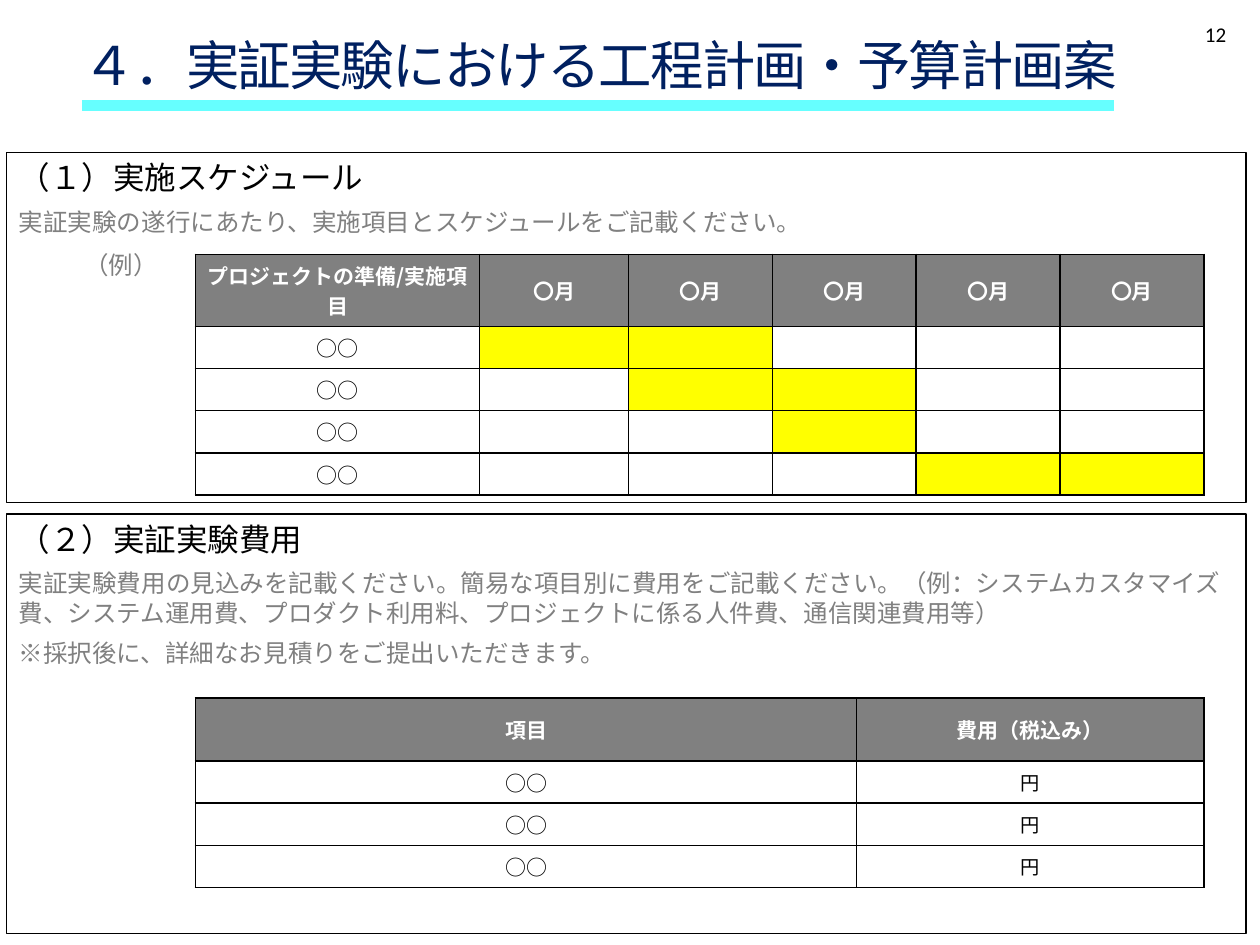
"""Build the schedule and budget plan slide for the demonstration experiment."""
from dataclasses import dataclass

from lxml import etree
from pptx import Presentation
from pptx.dml.color import RGBColor
from pptx.enum.shapes import MSO_CONNECTOR, MSO_SHAPE
from pptx.enum.text import MSO_ANCHOR, PP_ALIGN
from pptx.oxml.ns import qn
from pptx.util import Cm, Pt

LEFT, CENTER, RIGHT = PP_ALIGN.LEFT, PP_ALIGN.CENTER, PP_ALIGN.RIGHT
TOP, MIDDLE = MSO_ANCHOR.TOP, MSO_ANCHOR.MIDDLE
RECTANGLE, STRAIGHT = MSO_SHAPE.RECTANGLE, MSO_CONNECTOR.STRAIGHT


@dataclass(frozen=True)
class Theme:
    navy: str = "002060"
    cyan: str = "66FFFF"
    black: str = "000000"
    white: str = "FFFFFF"
    gray: str = "808080"
    yellow: str = "FFFF00"
    latin: str = "Calibri"
    japanese: str = "Noto Sans CJK JP"
    title: float = 30.5
    heading: float = 18
    body: float = 14
    table: float = 12
    yen: float = 11


theme = Theme()


def write(paragraph, text, size, color, face=theme.japanese, align=LEFT, bold=False):
    paragraph.text = text
    paragraph.alignment = align
    for run in paragraph.runs:
        run.font.size, run.font.bold, run.font.name = Pt(size), bold, face
        run.font.color.rgb = RGBColor.from_string(color)
        etree.SubElement(run.font._element, qn("a:ea"), typeface=face)
    etree.SubElement(paragraph._p, qn("a:endParaRPr"), sz=str(int(size * 100)))


def add_grid(top, header_height, widths, rows, yellow_cells=(), body_fill=None):
    height = header_height + 0.85 * (len(rows) - 1)
    frame = slide.shapes.add_table(len(rows), len(widths), Cm(3.94), Cm(top),
                                   Cm(sum(widths)), Cm(height))
    grid = frame.table
    grid.horz_banding = False
    for column, width in zip(grid.columns, widths):
        column.width = Cm(width)
    for r, row in enumerate(rows):
        header = r == 0
        grid.rows[r].height = Cm(header_height if header else 0.85)
        for c, text in enumerate(row):
            cell = grid.cell(r, c)
            cell.vertical_anchor = MIDDLE
            cell.margin_left = cell.margin_right = Cm(0.23)
            cell.margin_top = cell.margin_bottom = Cm(0.1)
            write(cell.text_frame.paragraphs[0], text,
                  theme.yen if text == "円" else theme.table,
                  theme.white if header else theme.black, align=CENTER, bold=header)
            properties = cell._tc.get_or_add_tcPr()
            for side in ("lnL", "lnR", "lnT", "lnB"):
                border = etree.SubElement(properties, qn(f"a:{side}"), w=str(Pt(1)))
                paint = etree.SubElement(border, qn("a:solidFill"))
                etree.SubElement(paint, qn("a:srgbClr"), val=theme.black)
            color = theme.gray if header else theme.yellow if (r, c) in yellow_cells else body_fill
            if color:
                cell.fill.solid()
                cell.fill.fore_color.rgb = RGBColor.from_string(color)
            else:
                cell.fill.background()


presentation = Presentation()
presentation.slide_width, presentation.slide_height = Cm(25.4), Cm(19.05)
slide = presentation.slides.add_slide(presentation.slide_layouts[6])

title = slide.shapes.add_textbox(Cm(1.42), Cm(0.66), Cm(21.87), Cm(2.13)).text_frame
title.word_wrap = False
write(title.paragraphs[0], "４．実証実験における工程計画・予算計画案", theme.title, theme.navy, theme.latin)
title.paragraphs[0].line_spacing = 0.9
title.paragraphs[0].runs[0].font._element.set("spc", "-100")

underline = slide.shapes.add_connector(STRAIGHT, Cm(1.65), Cm(2.13), Cm(22.45), Cm(2.13))
underline.line.width = Pt(6)
underline.line.color.rgb = RGBColor.from_string(theme.cyan)
etree.SubElement(underline._element.spPr, qn("a:effectLst"))

page_number = slide.shapes.add_textbox(Cm(19.25), Cm(0.3), Cm(5.72), Cm(1.02)).text_frame
page_number.word_wrap = True
write(page_number.paragraphs[0], "12", theme.table, theme.black, theme.latin, RIGHT)

sections = [
    (3.07, 7.06, ["（１）実施スケジュール",
                  "実証実験の遂行にあたり、実施項目とスケジュールをご記載ください。",
                  "（例）"]),
    (10.36, 8.46, ["（２）実証実験費用",
                   "実証実験費用の見込みを記載ください。簡易な項目別に費用をご記載ください。"
                   "（例：システムカスタマイズ費、システム運用費、プロダクト利用料、"
                   "プロジェクトに係る人件費、通信関連費用等）",
                   "※採択後に、詳細なお見積りをご提出いただきます。"]),
]
for top, height, texts in sections:
    panel = slide.shapes.add_shape(RECTANGLE, Cm(0.13), Cm(top), Cm(24.99), Cm(height))
    panel.shadow.inherit = False
    panel.fill.background()
    panel.line.width = Pt(0.75)
    panel.line.color.rgb = RGBColor.from_string(theme.black)
    panel.text_frame.word_wrap = True
    panel.text_frame.vertical_anchor = TOP
    for i, text in enumerate(texts):
        paragraph = panel.text_frame.add_paragraph() if i else panel.text_frame.paragraphs[0]
        write(paragraph, text, theme.body if i else theme.heading, theme.gray if i else theme.black)
        example = text == "（例）"
        paragraph.line_spacing = 0.9 if example else 1.0
        paragraph.space_before = Pt(10 if example else 6)
        if example:
            paragraph._p.get_or_add_pPr().set("marL", str(Cm(1.32)))

month_count = 5
schedule = [["プロジェクトの準備/実施項目"] + ["〇月"] * month_count]
schedule += [["○○"] + [""] * month_count for _ in range(4)]
active_months = {(1, 1), (1, 2), (2, 2), (2, 3), (3, 3), (4, 4), (4, 5)}
add_grid(5.13, 1.45, [5.73, 3] + [2.9] * 4, schedule, active_months, theme.white)

costs = [["項目", "費用（税込み）"]] + [["○○", "円"]] * 3
add_grid(14.07, 1.27, [13.33, 7], costs)

presentation.save("out.pptx")
